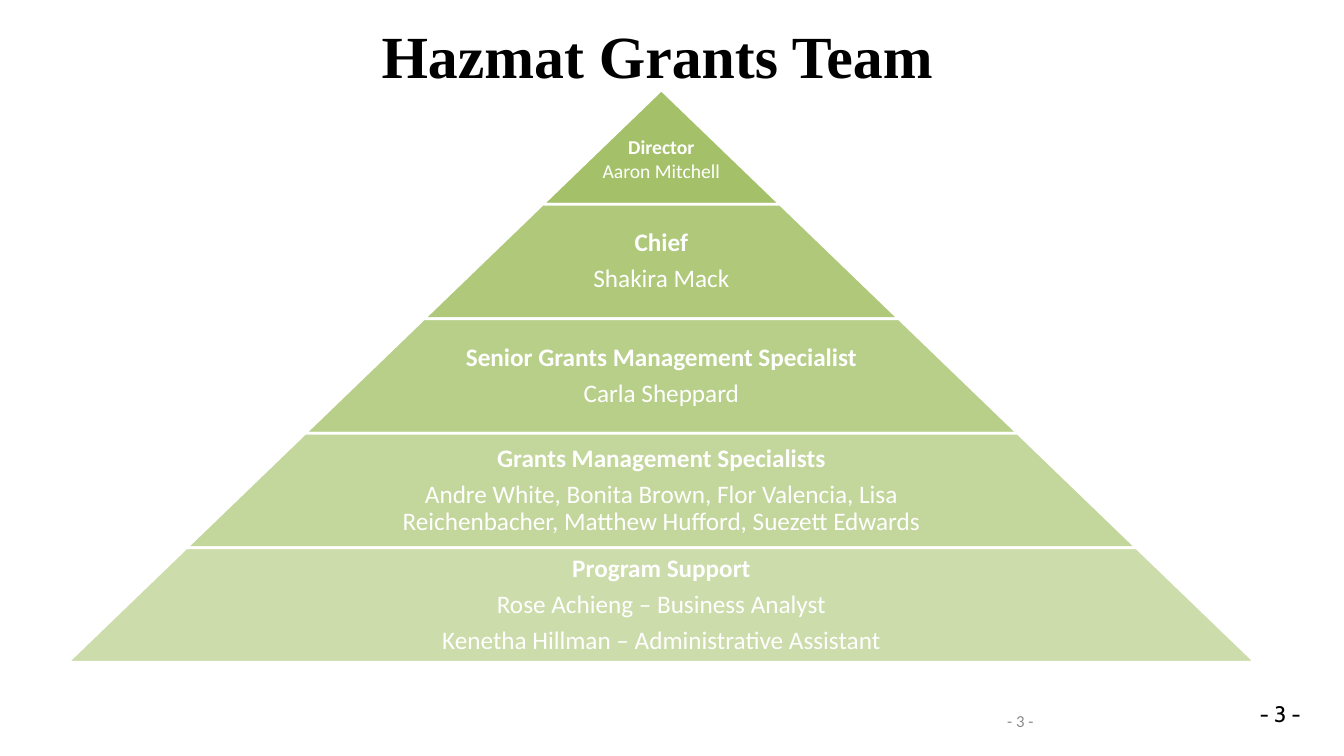
from dataclasses import dataclass

from lxml.etree import SubElement
from pptx import Presentation
from pptx.dml.color import RGBColor
from pptx.enum.shapes import MSO_SHAPE
from pptx.enum.text import MSO_ANCHOR, PP_ALIGN
from pptx.oxml.ns import qn
from pptx.util import Inches, Pt


@dataclass(frozen=True)
class Theme:
    black: str = "000000"
    white: str = "FFFFFF"
    gray: str = "8C8C8C"
    green: str = "9BBB59"
    serif: str = "Times New Roman"
    sans: str = "Calibri"
    page: str = "Cabin"
    title: float = 42.7
    body: float = 18
    small: float = 14
    number: float = 16
    foot: float = 12


THEME = Theme()
INSET = (0.1, 0.05, 0.1, 0.05)
TIERS = [
    ("Director", ["Aaron Mitchell"]),
    ("Chief", ["Shakira Mack"]),
    ("Senior Grants Management Specialist", ["Carla Sheppard"]),
    ("Grants Management Specialists",
     ["Andre White, Bonita Brown, Flor Valencia, Lisa Reichenbacher, "
      "Matthew Hufford, Suezett Edwards"]),
    ("Program Support",
     ["Rose Achieng – Business Analyst",
      "Kenetha Hillman – Administrative Assistant"]),
]


def apply(target, values):
    for name, value in values.items():
        setattr(target, name, value)


def add_text(slide, box, lines, face, size, color, bold=(), inset=INSET,
             anchor=MSO_ANCHOR.MIDDLE, **layout):
    """Add one paragraph per line; bold holds the indexes of bold lines."""
    frame = slide.shapes.add_textbox(*map(Inches, box)).text_frame
    left, top, right, bottom = map(Inches, inset)
    apply(frame, {"word_wrap": True, "vertical_anchor": anchor,
                  "margin_left": left, "margin_top": top,
                  "margin_right": right, "margin_bottom": bottom})
    for i, line in enumerate(lines):
        para = frame.add_paragraph() if i else frame.paragraphs[0]
        apply(para, layout)
        run = para.add_run()
        run.text = line
        apply(run.font, {"name": face, "size": Pt(size), "bold": i in bold})
        run.font.color.rgb = RGBColor.from_string(color)


def add_tier(slide, box, slant, alpha):
    tier = slide.shapes.add_shape(MSO_SHAPE.TRAPEZOID, *map(Inches, box))
    tier.adjustments[0] = slant
    tier.shadow.inherit = False
    tier.fill.solid()
    tier.fill.fore_color.rgb = RGBColor.from_string(THEME.green)
    color = tier.fill._xPr.find(qn("a:solidFill"))[0]
    SubElement(color, qn("a:alpha"), val=str(alpha * 1000))
    tier.line.color.rgb = RGBColor.from_string(THEME.white)
    tier.line.width = Pt(2)


def add_pyramid(slide, box):
    left, top, width, height = box
    count = len(TIERS)
    step, grow = height / count, width / count
    for i, (role, names) in enumerate(TIERS):
        wide = grow * (i + 1)
        x, y = left + (width - wide) / 2, top + step * i
        add_tier(slide, (x, y, wide, step), grow / 2 / step, 90 - 10 * i)
        if i == 0:
            size, share, inset = THEME.small, 1, (0.02, 0.25, 0.02, 0.02)
            gaps = {}
        else:
            size, share, inset = THEME.body, 0.65, (0.03,) * 4
            gaps = {"line_spacing": 0.9, "space_after": Pt(0.35 * size)}
        part = wide * share
        add_text(slide, (x + (wide - part) / 2, y, part, step),
                 [role, *names], THEME.sans, size, THEME.white, bold=(0,),
                 inset=inset, alignment=PP_ALIGN.CENTER, **gaps)


def add_title(slide, box):
    add_text(slide, box, ["Hazmat Grants Team"], THEME.serif, THEME.title,
             THEME.black, bold=(0,), alignment=PP_ALIGN.CENTER)


def add_footer(slide, box):
    left, top, width, height = box
    label = ["- 3 -"]
    add_text(slide, (left, top + 0.05, width, 0.4), label,
             THEME.sans, THEME.foot, THEME.gray)
    add_text(slide, (left + width - 1.44, top, 1.44, height), label,
             THEME.page, THEME.number, THEME.black,
             anchor=MSO_ANCHOR.TOP, alignment=PP_ALIGN.RIGHT)


def main():
    deck = Presentation()
    apply(deck, {"slide_width": Inches(13.33), "slide_height": Inches(7.5)})
    slide = deck.slides.add_slide(deck.slide_layouts[6])
    add_footer(slide, (9.89, 6.9, 3.11, 0.52))
    add_title(slide, (0.52, 0.25, 12, 0.58))
    add_pyramid(slide, (0.67, 0.89, 11.78, 5.68))
    deck.save("out.pptx")


if __name__ == "__main__":
    main()
